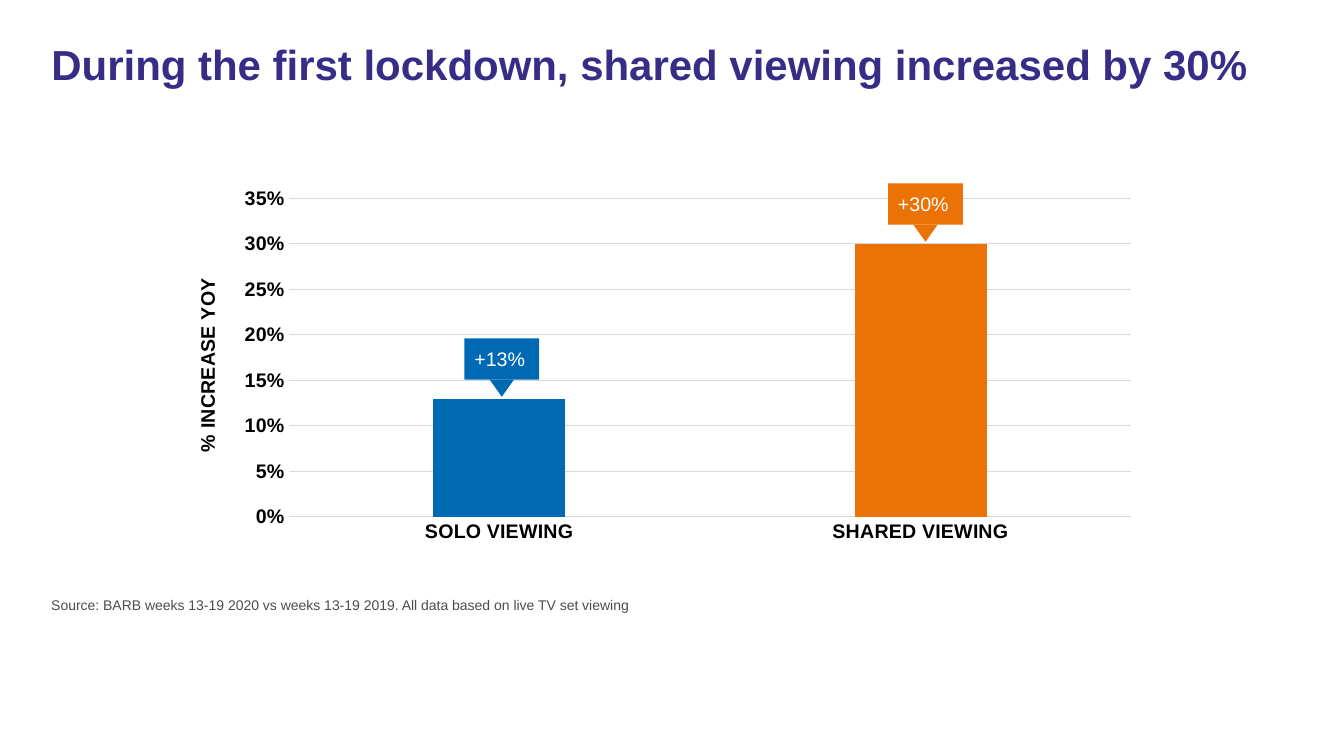
from dataclasses import dataclass

from lxml.etree import SubElement
from pptx import Presentation
from pptx.chart.data import CategoryChartData
from pptx.dml.color import RGBColor
from pptx.enum.chart import XL_CHART_TYPE, XL_TICK_MARK
from pptx.enum.shapes import MSO_SHAPE
from pptx.enum.text import MSO_ANCHOR, PP_ALIGN
from pptx.oxml import parse_xml
from pptx.oxml.ns import nsdecls, qn
from pptx.util import Pt


@dataclass(frozen=True)
class Theme:
    """Colours, font and type sizes of the slide."""
    font: str = "Arial"
    title: str = "372D87"
    note: str = "4D4D4D"
    ink: str = "000000"
    white: str = "FFFFFF"
    grid: str = "D9D9D9"
    solo: str = "0069B4"
    shared: str = "EB7305"
    title_size: float = 30
    label_size: float = 14
    note_size: float = 10


THEME = Theme()


def style(font, size, color, bold=False):
    """Set face, size, colour and weight of a font."""
    font.name, font.size, font.bold = THEME.font, Pt(size), bold
    font.color.rgb = RGBColor.from_string(color)


def write(frame, text, *, size, color, bold=False, anchor=MSO_ANCHOR.TOP, spacing=None):
    """Put formatted, left-aligned text in a text frame."""
    frame.word_wrap = True
    frame.vertical_anchor = anchor
    frame.text = text
    para = frame.paragraphs[0]
    para.alignment = PP_ALIGN.LEFT
    para.line_spacing = spacing
    style(para.runs[0].font, size, color, bold)


def place(shape, left, top, width, height):
    """Move and size a shape, in points."""
    shape.left, shape.top = Pt(left), Pt(top)
    shape.width, shape.height = Pt(width), Pt(height)


def add_block(group, kind, box, color):
    """Add a plain filled shape to a group."""
    block = group.shapes.add_shape(kind, *map(Pt, box))
    block.shadow.inherit = False
    block.fill.solid()
    block.fill.fore_color.rgb = RGBColor.from_string(color)
    block.line.fill.background()
    return block


def add_callout(slide, text, left, top, color):
    """Add a label box with a pointer centred below it."""
    width, height, tip = 53.5, 29.5, 17.3
    group = slide.shapes.add_group_shape()
    label = add_block(group, MSO_SHAPE.RECTANGLE, (left, top, width, height), color)
    write(label.text_frame, text, size=THEME.label_size, color=THEME.white,
          anchor=MSO_ANCHOR.MIDDLE)
    tip_box = (left + (width - tip) / 2, top + height, tip, 12.2)
    pointer = add_block(group, MSO_SHAPE.ISOSCELES_TRIANGLE, tip_box, color)
    pointer.rotation = 180


def set_plot(chart, **parts):
    """Fix the inner plot area as fractions of the chart."""
    plot = chart._chartSpace.chart.plotArea
    for old in plot.findall(qn("c:layout")):
        plot.remove(old)
    layout = parse_xml(f"<c:layout {nsdecls('c')}/>")
    manual = SubElement(layout, qn("c:manualLayout"))
    values = {"layoutTarget": "inner", "xMode": "edge", "yMode": "edge", **parts}
    for name, value in values.items():
        SubElement(manual, qn(f"c:{name}")).set("val", str(value))
    plot.insert(0, layout)


def set_line(line, color):
    """Give a chart line its colour and width."""
    line.color.rgb = RGBColor.from_string(color)
    line.width = Pt(0.75)


def add_bars(slide, values, colors, box):
    """Add the column chart with one colour per category."""
    data = CategoryChartData(number_format="0%")
    data.categories = list(values)
    data.add_series("Series 1", list(values.values()))
    chart = slide.shapes.add_chart(
        XL_CHART_TYPE.COLUMN_CLUSTERED, *map(Pt, box), data).chart
    chart.has_legend = chart.has_title = False
    style(chart.font, THEME.note_size, THEME.ink)
    set_plot(chart, x=0.111, y=0.041, w=0.855, h=0.865)
    plot = chart.plots[0]
    plot.gap_width, plot.overlap, plot.vary_by_categories = 219, -27, False
    for index, color in enumerate(colors):
        fill = plot.series[0].points[index].format.fill
        fill.solid()
        fill.fore_color.rgb = RGBColor.from_string(color)
    for axis in (chart.category_axis, chart.value_axis):
        axis.major_tick_mark = axis.minor_tick_mark = XL_TICK_MARK.NONE
        style(axis.tick_labels.font, THEME.label_size, THEME.ink, True)
    set_line(chart.category_axis.format.line, THEME.grid)
    scale = chart.value_axis
    scale.minimum_scale, scale.maximum_scale, scale.major_unit = 0, 0.35, 0.05
    scale.tick_labels.number_format = "0%"
    scale.tick_labels.number_format_is_linked = False
    scale.format.line.fill.background()
    set_line(scale.major_gridlines.format.line, THEME.grid)
    frame = scale.axis_title.text_frame
    frame.text = "% INCREASE YOY"
    style(frame.paragraphs[0].runs[0].font, THEME.label_size, THEME.ink, True)


def main():
    """Build and save the slide."""
    deck = Presentation()
    deck.slide_width, deck.slide_height = Pt(960), Pt(540)
    slide = deck.slides.add_slide(deck.slide_layouts[5])
    left, width = 29.5, 893
    title = slide.shapes.title
    place(title, left, 28, width, 81)
    write(title.text_frame, "During the first lockdown, shared viewing increased by 30%",
          size=THEME.title_size, color=THEME.title, bold=True, spacing=0.9)
    note = slide.shapes.add_textbox(Pt(left), Pt(422.6), Pt(width), Pt(24))
    write(note.text_frame,
          "Source: BARB weeks 13-19 2020 vs weeks 13-19 2019. "
          "All data based on live TV set viewing",
          size=THEME.note_size, color=THEME.note)
    add_bars(slide, {"SOLO VIEWING": 0.13, "SHARED VIEWING": 0.3},
             (THEME.solo, THEME.shared), (128, 131, 704, 263))
    add_callout(slide, "+13%", 331.7, 241.7, THEME.solo)
    add_callout(slide, "+30%", 634.3, 131, THEME.shared)
    deck.save("out.pptx")


if __name__ == "__main__":
    main()
